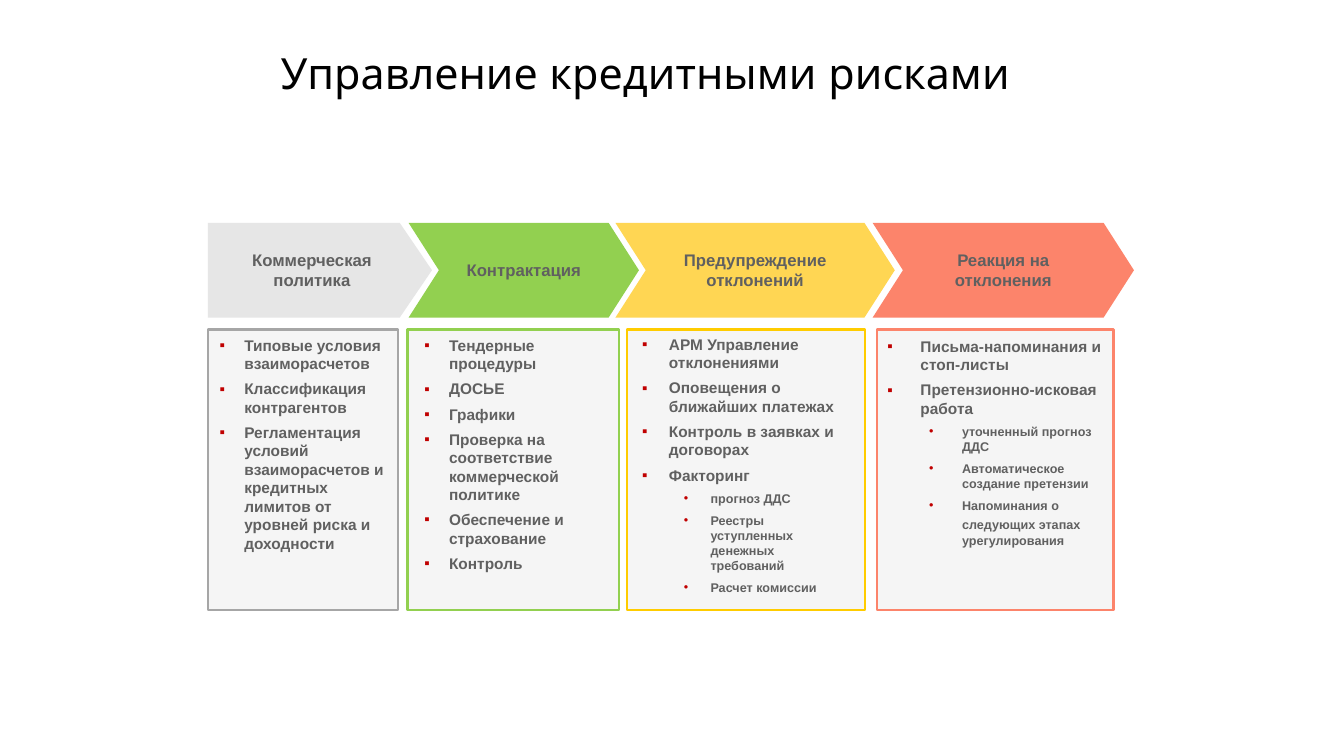
"""Build a slide with the four stages of credit risk management."""
import pptx
import pptx.dml.color
import pptx.enum.shapes
import pptx.enum.text
import pptx.oxml
import pptx.oxml.ns
import pptx.util
import lxml.etree

Pt = pptx.util.Pt
SHAPES = pptx.enum.shapes.MSO_SHAPE
ANCHOR = pptx.enum.text.MSO_ANCHOR
ALIGN = pptx.enum.text.PP_ALIGN

COLORS = {
    "title": "000000", "text": "606060", "bullet": "C00000", "panel": "F2F2F2",
    "gray": "E6E6E6", "gray line": "A6A6A6",
    "green": "92D050", "green line": "92D050",
    "yellow": "FFD653", "yellow line": "FFCC00",
    "red": "FC846B", "red line": "FC846B",
}
TITLE = "Управление кредитными рисками"
TOPIC, DETAIL = 0, 1
BULLETS = {TOPIC: ("▪", 10.4), DETAIL: ("•", 8.5)}
HEADING_SIZE = 11.3
STAGES = [
    {"name": "Коммерческая политика", "color": "gray",
     "arrow": (140.4, 151.2), "panel": (140.4, 128.2),
     "insets": (7.9, 4.3, 7.2), "hanging": 16.6, "detail": 0,
     "items": [
         (TOPIC, "Типовые условия взаиморасчетов"),
         (TOPIC, "Классификация контрагентов"),
         (TOPIC, "Регламентация условий взаиморасчетов и кредитных лимитов "
                 "от уровней риска и доходности")]},
    {"name": "Контрактация", "color": "green",
     "arrow": (275.8, 155.5), "panel": (275, 142.6),
     "insets": (11.5, 4.3, 7.9), "hanging": 16.6, "detail": 0,
     "items": [
         (TOPIC, "Тендерные процедуры"),
         (TOPIC, "ДОСЬЕ"),
         (TOPIC, "Графики"),
         (TOPIC, "Проверка на соответствие коммерческой политике"),
         (TOPIC, "Обеспечение и страхование"),
         (TOPIC, "Контроль")]},
    {"name": "Предупреждение отклонений", "color": "yellow",
     "arrow": (415.4, 188.6), "panel": (423.4, 160.6),
     "insets": (10.1, 3.6, 10.1), "hanging": 18, "detail": 46.1,
     "items": [
         (TOPIC, "АРМ Управление отклонениями"),
         (TOPIC, "Оповещения о ближайших платежах"),
         (TOPIC, "Контроль в заявках и договорах"),
         (TOPIC, "Факторинг"),
         (DETAIL, "прогноз ДДС"),
         (DETAIL, "Реестры уступленных денежных требований"),
         (DETAIL, "Расчет комиссии")]},
    {"name": "Реакция на отклонения", "color": "red",
     "arrow": (589, 176.4), "panel": (591.8, 159.8),
     "insets": (7.2, 5, 6.5), "hanging": 22.3, "detail": 50.4,
     "items": [
         (TOPIC, "Письма-напоминания и стоп-листы"),
         (TOPIC, "Претензионно-исковая работа"),
         (DETAIL, "уточненный прогноз ДДС"),
         (DETAIL, "Автоматическое создание претензии"),
         (DETAIL, "Напоминания о следующих этапах", "урегулирования")]},
]
ARROW_TOP, ARROW_HEIGHT = 150.5, 64
PANEL_TOP, PANEL_HEIGHT = 222.5, 189.4


def rgb(name):
    return pptx.dml.color.RGBColor.from_string(COLORS[name])


def add_text(para, text, size=HEADING_SIZE, color="text", font="Arial", bold=True):
    span = para.add_run()
    span.text = text
    span.font.size = Pt(size)
    span.font.name = font
    span.font.bold = bold
    span.font.color.rgb = rgb(color)


def place(shape, left, top, width, height):
    shape.left, shape.top = Pt(left), Pt(top)
    shape.width, shape.height = Pt(width), Pt(height)


def set_frame(frame, left, top, right, bottom, anchor):
    frame.word_wrap = True
    frame.auto_size = pptx.enum.text.MSO_AUTO_SIZE.NONE
    frame.vertical_anchor = anchor
    frame.margin_left, frame.margin_top = Pt(left), Pt(top)
    frame.margin_right, frame.margin_bottom = Pt(right), Pt(bottom)


def add_child(parent, tag, **attributes):
    child = lxml.etree.SubElement(parent, pptx.oxml.ns.qn(tag))
    for key, value in attributes.items():
        child.set(key, value)
    return child


def set_bullet(para, mark, indent, hanging):
    para.alignment = ALIGN.LEFT
    para.line_spacing = 1.0
    para.space_before = Pt(0)
    para.space_after = Pt(4.5)
    props = para._p.get_or_add_pPr()
    props.set("marL", str(int(Pt(indent))))
    props.set("indent", str(-int(Pt(hanging))))
    add_child(add_child(props, "a:buClr"), "a:srgbClr", val=COLORS["bullet"])
    add_child(props, "a:buFont", typeface="Arial")
    add_child(props, "a:buChar", char=mark)


def add_arrow(page, stage, kind, point):
    left, width = stage["arrow"]
    arrow = page.shapes.add_shape(
        kind, Pt(left), Pt(ARROW_TOP), Pt(width), Pt(ARROW_HEIGHT))
    arrow.adjustments[0] = point
    arrow.shadow.inherit = False
    arrow.fill.solid()
    arrow.fill.fore_color.rgb = rgb(stage["color"])
    arrow.line.fill.background()
    set_frame(arrow.text_frame, 4.3, 4.3, 4.3, 4.3, ANCHOR.MIDDLE)
    para = arrow.text_frame.paragraphs[0]
    para.alignment = ALIGN.CENTER
    add_text(para, stage["name"])


def fill_panel(panel, stage):
    left, width = stage["panel"]
    place(panel, left, PANEL_TOP, width, PANEL_HEIGHT)
    panel.fill.solid()
    panel.fill.fore_color.rgb = rgb("panel")
    tint = panel._element.spPr.find(".//" + pptx.oxml.ns.qn("a:srgbClr"))
    add_child(tint, "a:alpha", val="70000")
    panel.line.color.rgb = rgb(stage["color"] + " line")
    panel.line.width = Pt(1.5)
    frame = panel.text_frame
    set_frame(frame, *stage["insets"], 3.6, ANCHOR.TOP)
    for number, (level, *parts) in enumerate(stage["items"]):
        para = frame.add_paragraph() if number else frame.paragraphs[0]
        mark, size = BULLETS[level]
        indent = stage["detail"] if level == DETAIL else stage["hanging"]
        set_bullet(para, mark, indent, stage["hanging"])
        for place_in_line, part in enumerate(parts):
            if place_in_line:
                add_text(para, " ")
            add_text(para, part, size=size)


def main():
    deck = pptx.Presentation()
    deck.slide_width, deck.slide_height = Pt(907.2), Pt(510.5)
    page = deck.slides.add_slide(deck.slide_layouts.get_by_name("Comparison"))

    title = page.shapes.title
    place(title, 182.2, 8.6, 700.6, 80.6)
    set_frame(title.text_frame, 7.2, 3.6, 7.2, 3.6, ANCHOR.MIDDLE)
    para = title.text_frame.paragraphs[0]
    para.alignment = ALIGN.LEFT
    add_text(para, TITLE, size=29, color="title", font="Quicksand", bold=False)

    for number, stage in enumerate(STAGES, start=1):
        fill_panel(page.placeholders[number], stage)
        kind, point = (SHAPES.CHEVRON, 0.32) if number > 1 else (SHAPES.PENTAGON, 0.34)
        add_arrow(page, stage, kind, point)

    deck.save("out.pptx")


if __name__ == "__main__":
    main()
